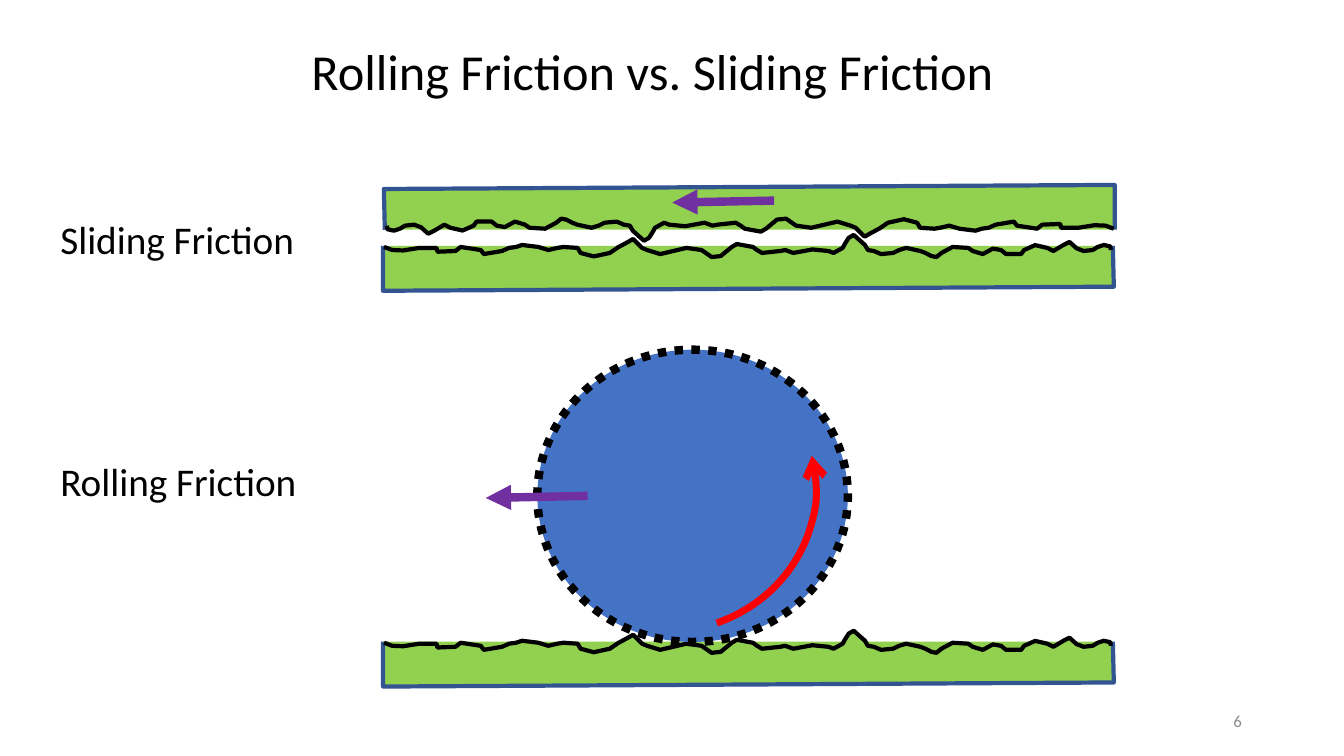
from lxml import etree
from pptx import Presentation
from pptx.dml.color import RGBColor
from pptx.enum.dml import MSO_LINE
from pptx.enum.shapes import MSO_CONNECTOR, MSO_SHAPE
from pptx.enum.text import MSO_ANCHOR, MSO_AUTO_SIZE, PP_ALIGN
from pptx.oxml.ns import qn
from pptx.util import Pt

LEFT, CENTER, RIGHT = PP_ALIGN.LEFT, PP_ALIGN.CENTER, PP_ALIGN.RIGHT
TOP, MIDDLE = MSO_ANCHOR.TOP, MSO_ANCHOR.MIDDLE
FIT = MSO_AUTO_SIZE.SHAPE_TO_FIT_TEXT
FIXED = MSO_AUTO_SIZE.NONE
STRAIGHT = MSO_CONNECTOR.STRAIGHT
OVAL, ARC = MSO_SHAPE.OVAL, MSO_SHAPE.ARC
DOTTED = MSO_LINE.ROUND_DOT

# Content: words, (left, top, width, height), size, colour, alignment, anchor, fit
TEXTS = [
    ("Rolling Friction vs. Sliding Friction", (186.5, 25.2, 559.4, 51), 36, "000000", CENTER, TOP, FIT),
    ("Sliding Friction", (36, 150.5, 200, 41), 28, "000000", LEFT, TOP, FIT),
    ("Rolling Friction", (36, 323.3, 200, 41), 28, "000000", LEFT, TOP, FIT),
    ("6", (678.2, 500.4, 216, 28.8), 12, "8C8C8C", RIGHT, MIDDLE, FIXED),
]

# Block sides, then its rough upper surface, both from the block's corner
BLOCK = [(0, 0), (0, 32), (522, 29.1), (521.3, 0)]
SURFACE = [
    (0.7, 0.7), (6.5, 2.9), (14.4, 3.2), (25.9, 1.4), (38.2, 1.4), (38.9, 4.1),
    (51.8, 3.6), (55.4, 0.7), (69.8, 2.9), (72, 5.8), (85, 3.6), (90, 1.4),
    (95, 0.7), (99.4, -0.7), (110.9, 0.7), (118.1, 2.9), (124.6, 1.4), (128.9, 0.7),
    (139, 1.4), (141.1, 5), (150.5, 7.5), (162, 5), (167.8, 1), (175, -2.9),
    (178.6, -5), (182.2, -1.4), (185, 1.4), (188.6, 2.9), (198, 5.8), (216.7, 1.4),
    (227.5, 2.9), (234.7, 7.9), (241.2, 7.2), (249.1, 0.7), (252.7, -1.4), (264.2, 0.7),
    (267.1, 2.9), (270.7, 5), (283.7, 3.6), (287.3, 2.9), (293, 5), (306.7, 2.5),
    (318.2, 3.6), (321.8, 5), (328.3, 1.4), (329.8, -1.4), (332.6, -5.8), (336.2, -7.9),
    (344.2, -0.7), (346.3, 2.9), (350.6, 3.6), (355.7, 5.8), (364.3, 5), (368.6, 2.9),
    (373.7, 1.4), (383.8, 3.6), (387.4, 5), (391.7, 7.2), (395.3, 7.9), (398.9, 5),
    (406.8, 0.7), (418, 1.4), (421.2, 3.6), (428.4, 5.8), (435.6, 1.9), (441.4, 2.9),
    (445, 5.8), (455.8, 5.8), (457.9, 2.9), (465.8, -0.6), (474.5, 1.4), (478.8, 3.6),
    (486, -0.7), (490.3, -2.9), (495.4, 1.7), (500.4, 3.6), (506.9, 2.9), (510.5, 0.7),
    (514.8, -0.7), (519.5, 0.3), (519.8, 2.9),
]
# Corner of each block and its direction: -1 turns the block upside down
LOWER_BLOCK = (273.6, 175.7, 1)
UPPER_BLOCK = (796.2, 164.1, -1)
GROUND = (273.6, 458.4, 1)

WHEEL = (383.8, 249.8, 221.8, 208.8)
SPIN = (380.2, 247.7, 197.3, 208.8)
SPIN_TURN, SPIN_ANGLES = 75.3, (162, 213.06)
MOTIONS = [((553, 143.3), (480.2, 144.7)), ((419.8, 354.2), (347, 355.7))]

GREEN, EDGE, BLACK = "92D050", "325491", "000000"
BLUE, RED, PURPLE = "4472C4", "FF0000", "7030A0"

prs = Presentation()
prs.slide_width, prs.slide_height = Pt(960), Pt(540)
slide = prs.slides.add_slide(prs.slide_layouts[6])
shapes = slide.shapes


def paint(fmt, colour):
    fmt.solid()
    fmt.fore_color.rgb = RGBColor.from_string(colour)


def stroke(item, colour, width, *ends):
    paint(item.line.fill, colour)
    item.line.width = Pt(width)
    ln = item.line._get_or_add_ln()
    etree.SubElement(ln, qn("a:round"))
    for end, kind in ends:
        etree.SubElement(ln, qn("a:" + end), type=kind)


def outline(points, corner, edge):
    x, y, way = corner
    spots = [(Pt(x + way * px), Pt(y + way * py)) for px, py in points]
    builder = shapes.build_freeform(*spots[0], scale=1.0)
    builder.add_line_segments(spots[1:], close=False)
    part = builder.convert_to_shape()
    part.shadow.inherit = False
    paint(part.fill, GREEN)
    stroke(part, edge, 3)


def rough_block(corner):
    outline(BLOCK, corner, EDGE)
    outline(SURFACE, corner, BLACK)


def motion_arrow(start, end):
    arrow = shapes.add_connector(STRAIGHT, *map(Pt, start + end))
    stroke(arrow, PURPLE, 6, ("tailEnd", "triangle"))
    etree.SubElement(arrow._element.spPr, qn("a:effectLst"))


# Sliding blocks
rough_block(LOWER_BLOCK)
rough_block(UPPER_BLOCK)
motion_arrow(*MOTIONS[0])

# Rolling wheel on the ground
rough_block(GROUND)
wheel = shapes.add_shape(OVAL, *map(Pt, WHEEL))
wheel.shadow.inherit = False
paint(wheel.fill, BLUE)
wheel.line.dash_style = DOTTED
stroke(wheel, BLACK, 6)

spin = shapes.add_shape(ARC, *map(Pt, SPIN))
spin.shadow.inherit = False
spin.rotation = SPIN_TURN
for index, angle in enumerate(SPIN_ANGLES):
    spin.adjustments[index] = angle
spin.fill.background()
stroke(spin, RED, 5, ("headEnd", "arrow"))
motion_arrow(*MOTIONS[1])

# Title, labels and page number
for words, box, size, colour, align, anchor, fit in TEXTS:
    frame = shapes.add_textbox(*map(Pt, box)).text_frame
    for name, value in {"word_wrap": True, "auto_size": fit, "vertical_anchor": anchor}.items():
        setattr(frame, name, value)
    line = frame.paragraphs[0]
    line.alignment = align
    run = line.add_run()
    run.text = words
    for name, value in {"name": "Calibri", "size": Pt(size)}.items():
        setattr(run.font, name, value)
    paint(run.font.fill, colour)

prs.save("out.pptx")
